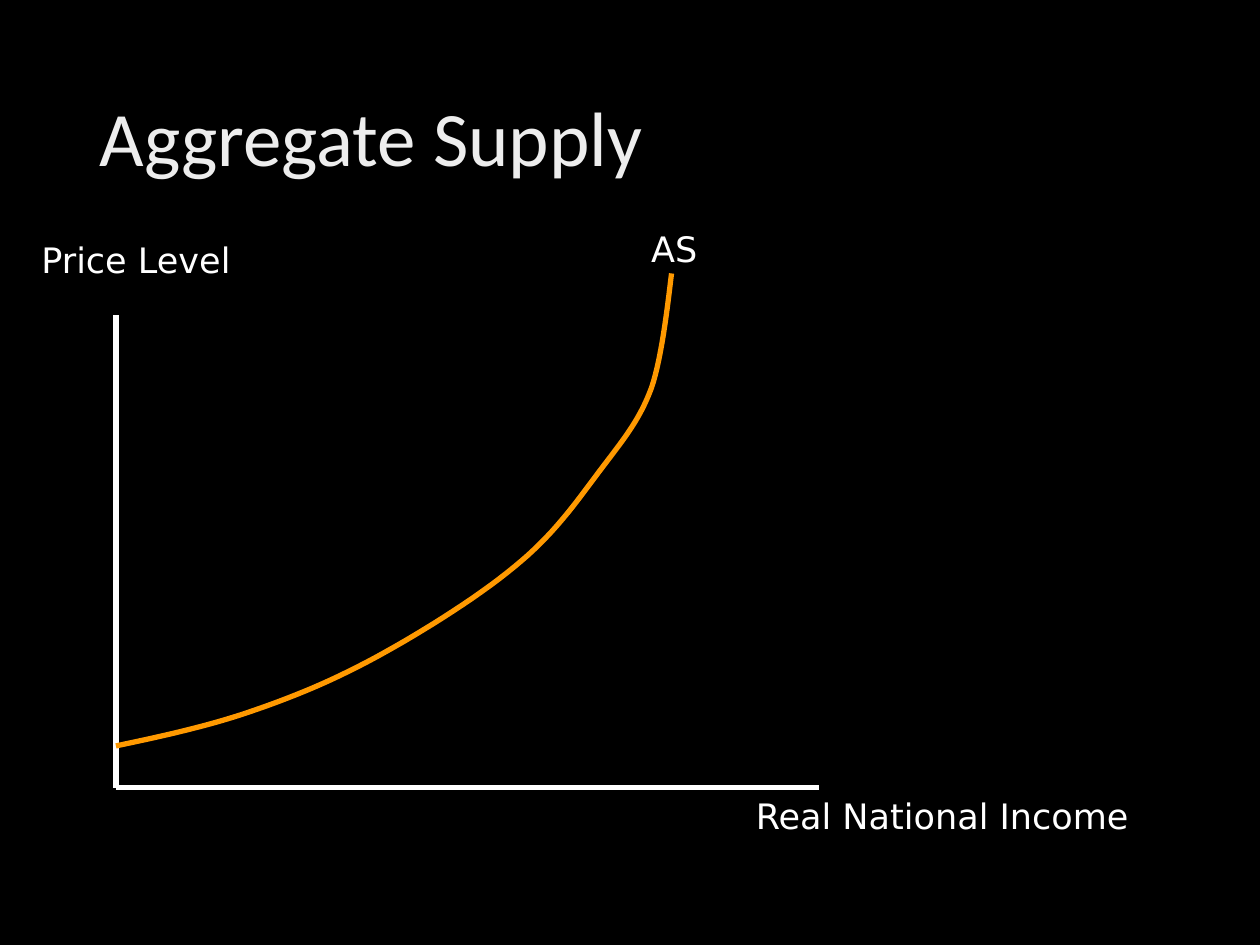
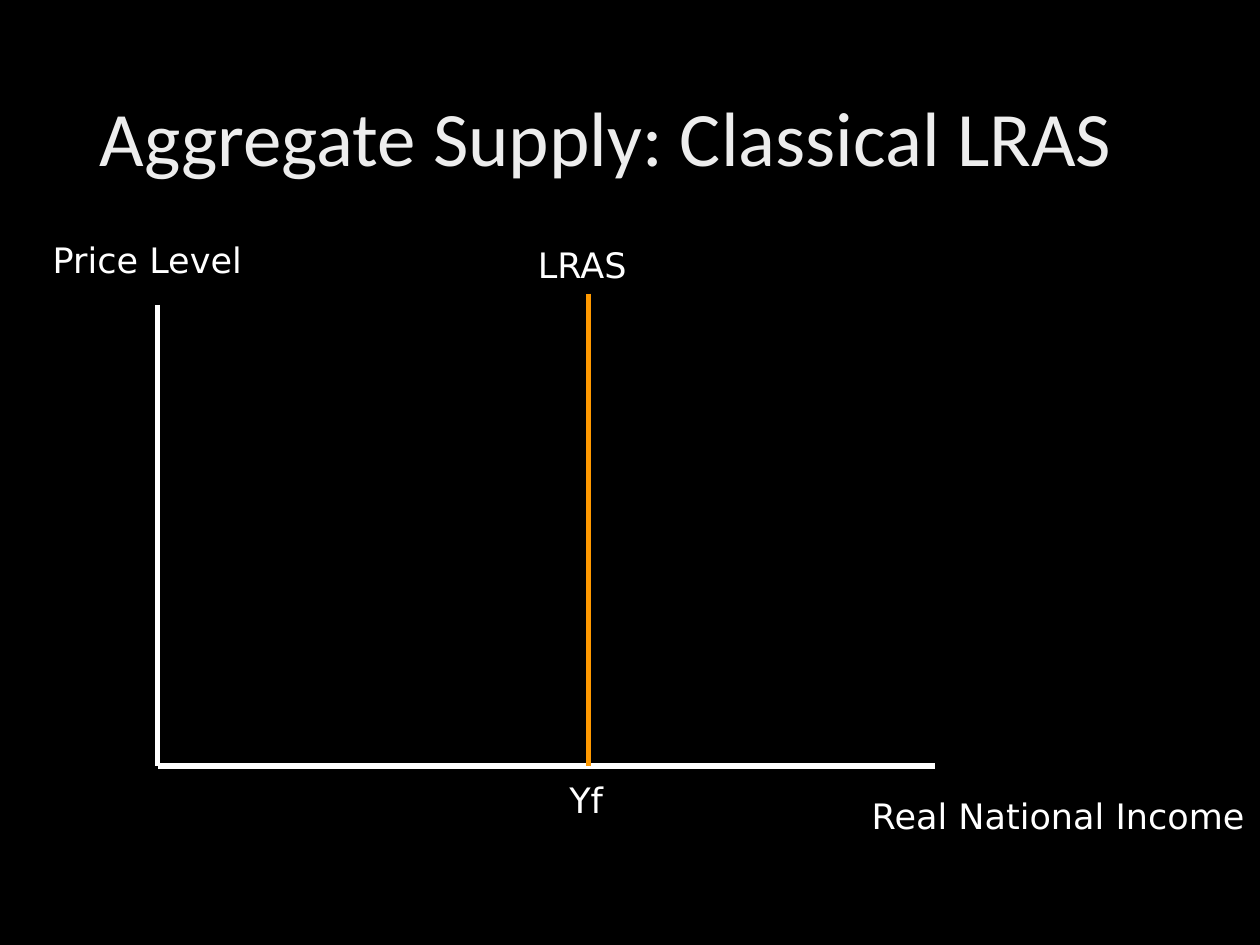
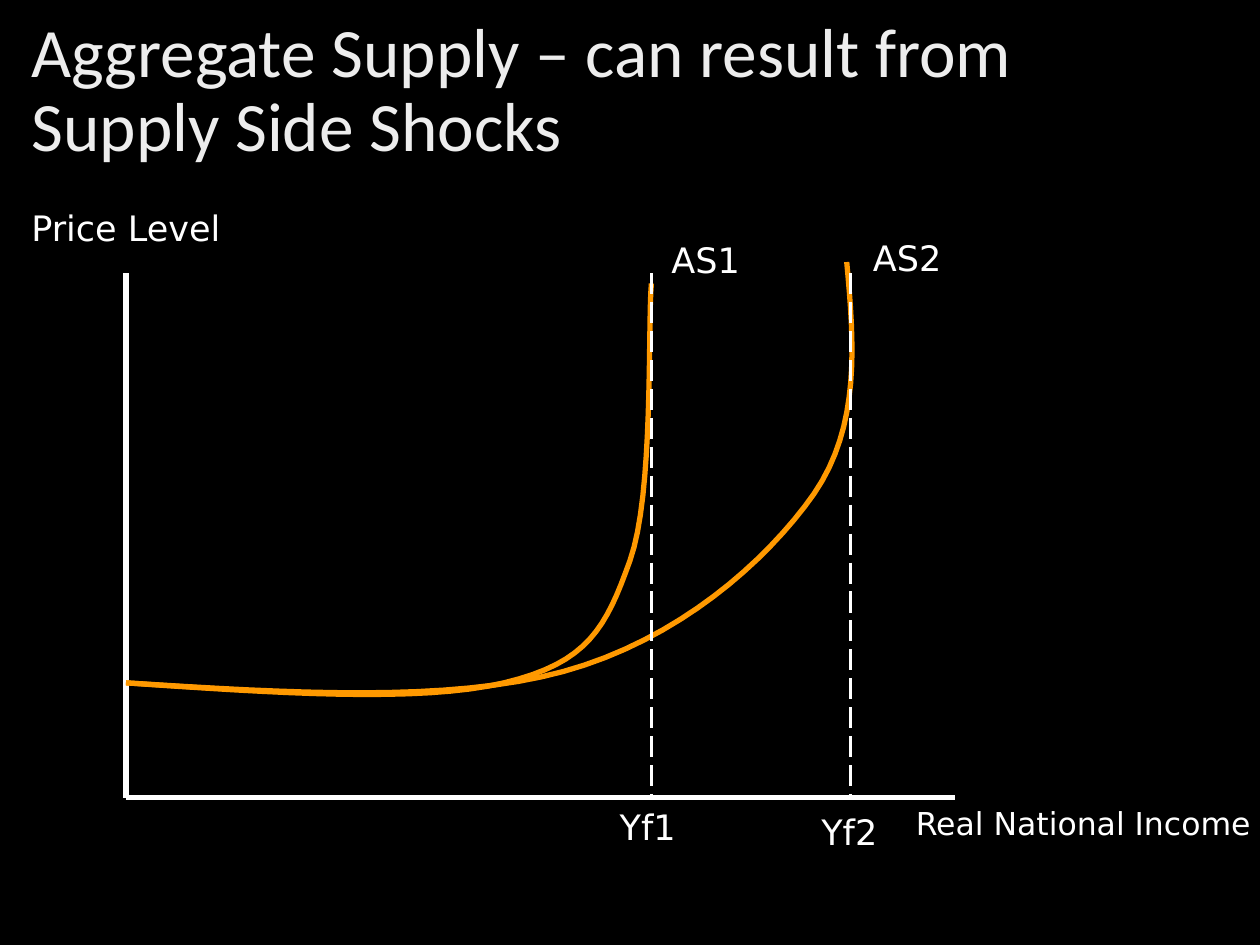
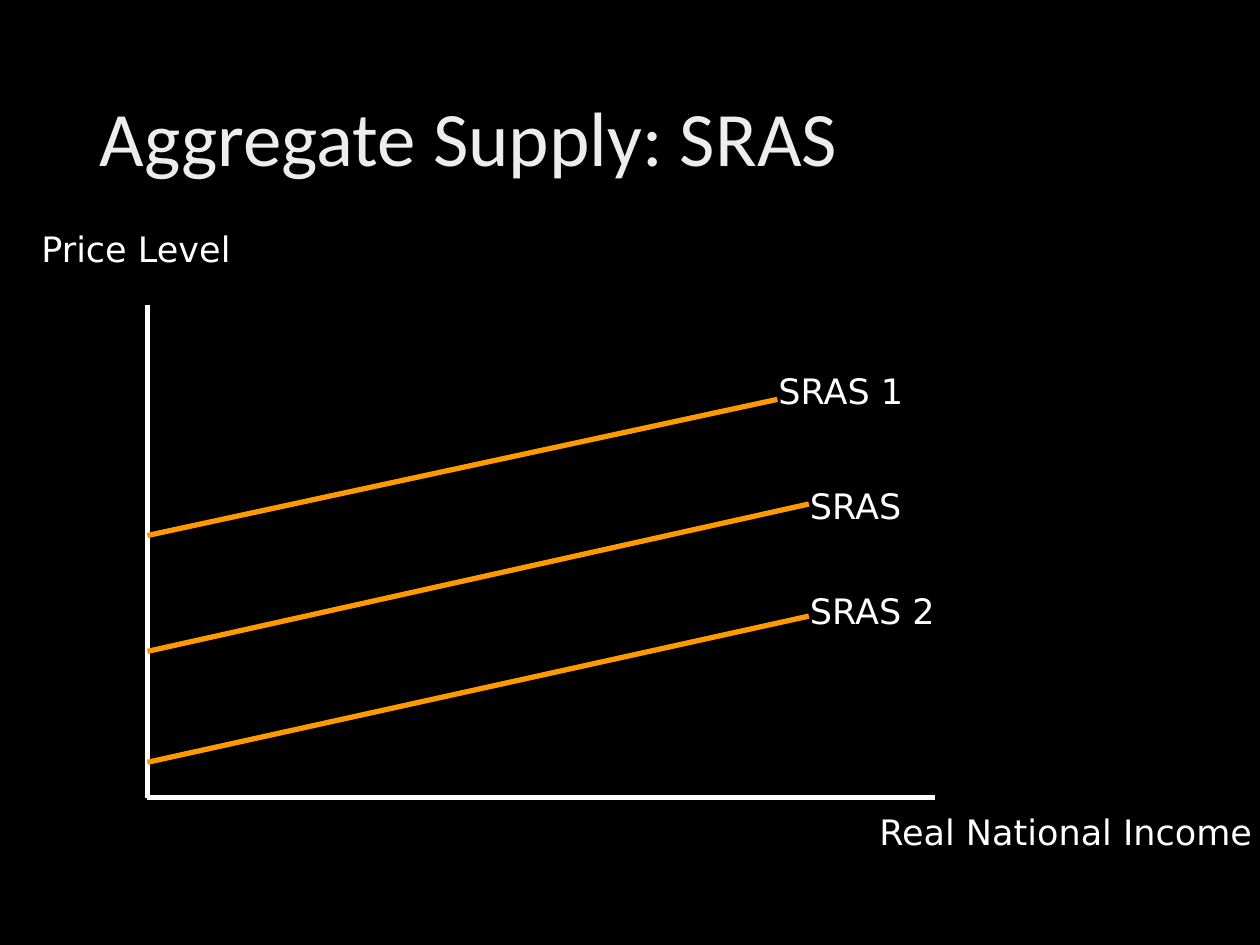
from copy import deepcopy
from dataclasses import dataclass

from lxml.etree import SubElement
from pptx import Presentation
from pptx.dml.color import RGBColor
from pptx.enum.dml import MSO_LINE
from pptx.enum.shapes import MSO_CONNECTOR
from pptx.enum.text import MSO_ANCHOR, MSO_AUTO_SIZE, PP_ALIGN
from pptx.oxml.ns import qn
from pptx.slide import Slide
from pptx.util import Inches, Pt

Point = tuple[float, float]

COLORS = {
    "background": "000000",
    "axis": "FFFFFF",
    "supply": "FF9900",
    "text": "FFFFFF",
    "title_start": "DEDEDE",
    "title_middle": "EDEDED",
    "title_end": "FFFFFF",
}
TITLE_STOPS = ((0, "title_start"), (0.28, "title_middle"), (1, "title_end"))
TITLE_FONT = "Calibri"
LABEL_FONT = "DejaVu Sans"
LABEL_SIZE = 20
LABEL_WIDTHS = {
    "Price Level": 1.71,
    "Real National Income": 3.18,
    "AS": 0.58,
    "LRAS": 0.93,
    "Yf": 0.47,
    "AS1": 0.76,
    "AS2": 0.76,
    "Yf1": 0.65,
    "Yf2": 0.65,
    "SRAS": 0.96,
    "SRAS 1": 1.24,
    "SRAS 2": 1.24,
}
CURVE_STEPS = 16
TITLE_ONLY_LAYOUT = 5


@dataclass(frozen=True)
class Title:
    text: str
    left: float = 0.69
    top: float = 0.4
    width: float = 8.62
    height: float = 1.45
    size: float = 44


@dataclass(frozen=True)
class Axes:
    left: float
    top: float
    right: float
    bottom: float


@dataclass(frozen=True)
class Line:
    start: Point
    end: Point
    color: str = "supply"
    width: float = 3
    dashed: bool = False


@dataclass(frozen=True)
class Label:
    text: str
    left: float
    top: float
    size: float = LABEL_SIZE


@dataclass(frozen=True)
class Diagram:
    title: Title
    axes: Axes
    labels: tuple[Label, ...]
    curves: tuple[tuple[Point, ...], ...] = ()
    lines: tuple[Line, ...] = ()


def full_output_line(x: float) -> Line:
    return Line((x, 2.17), (x, 6.33), "axis", 1.5, True)


DIAGRAMS = (
    Diagram(
        Title("Aggregate Supply"),
        Axes(0.92, 2.5, 6.5, 6.25),
        (
            Label("Price Level", 0.23, 1.84),
            Label("Real National Income", 5.9, 6.26),
            Label("AS", 5.07, 1.76),
        ),
        curves=((
            (0.92, 5.92),
            (1.25, 5.85), (1.58, 5.78), (1.92, 5.67),
            (2.25, 5.56), (2.56, 5.44), (2.92, 5.25),
            (3.28, 5.06), (3.78, 4.75), (4.08, 4.5),
            (4.39, 4.25), (4.57, 3.99), (4.75, 3.75),
            (4.93, 3.51), (5.07, 3.35), (5.17, 3.08),
            (5.26, 2.82), (5.31, 2.32), (5.33, 2.17),
        ),),
    ),
    Diagram(
        Title("Aggregate Supply: Classical LRAS", width=9.06),
        Axes(1.25, 2.42, 7.42, 6.08),
        (
            Label("Price Level", 0.32, 1.84),
            Label("Real National Income", 6.82, 6.26),
            Label("LRAS", 4.17, 1.88),
            Label("Yf", 4.42, 6.13),
        ),
        lines=(Line((4.67, 2.33), (4.67, 6.08)),),
    ),
    Diagram(
        Title("Aggregate Supply – can result from Supply Side Shocks",
              0.15, 0.27, 9.6, 0.92, 39.6),
        Axes(1, 2.17, 7.58, 6.33),
        (
            Label("Price Level", 0.15, 1.59),
            Label("Real National Income", 7.17, 6.33, 18),
            Label("AS1", 5.23, 1.84),
            Label("AS2", 6.83, 1.83),
            Label("Yf1", 4.82, 6.34),
            Label("Yf2", 6.42, 6.38),
        ),
        curves=(
            (
                (1, 5.42),
                (2.17, 5.5), (3.33, 5.58), (4, 5.42),
                (4.67, 5.26), (4.81, 4.98), (5, 4.45),
                (5.19, 3.92), (5.14, 2.62), (5.17, 2.25),
            ),
            (
                (1, 5.42),
                (2.28, 5.5), (3.56, 5.58), (4.47, 5.33),
                (5.38, 5.08), (6.08, 4.46), (6.46, 3.92),
                (6.83, 3.38), (6.78, 2.73), (6.72, 2.08),
            ),
        ),
        lines=(full_output_line(5.17), full_output_line(6.75)),
    ),
    Diagram(
        Title("Aggregate Supply: SRAS"),
        Axes(1.17, 2.42, 7.42, 6.33),
        (
            Label("Price Level", 0.23, 1.76),
            Label("Real National Income", 6.88, 6.38),
            Label("SRAS", 6.33, 3.8),
            Label("SRAS 1", 6.08, 2.88),
            Label("SRAS 2", 6.33, 4.63),
        ),
        lines=(
            Line((1.17, 5.17), (6.42, 4)),
            Line((1.17, 4.25), (6.17, 3.17)),
            Line((1.17, 6.05), (6.42, 4.89)),
        ),
    ),
)


def color(name: str) -> RGBColor:
    return RGBColor.from_string(COLORS[name])


def write_title(slide: Slide, title: Title) -> None:
    shape = slide.shapes.title
    shape.left, shape.top = Inches(title.left), Inches(title.top)
    shape.width, shape.height = Inches(title.width), Inches(title.height)
    frame = shape.text_frame
    frame.word_wrap = True
    frame.auto_size = MSO_AUTO_SIZE.NONE
    frame.vertical_anchor = MSO_ANCHOR.MIDDLE
    paragraph = frame.paragraphs[0]
    paragraph.alignment = PP_ALIGN.LEFT
    paragraph.line_spacing = 0.9
    run = paragraph.add_run()
    run.text = title.text
    run.font.name = TITLE_FONT
    run.font.size = Pt(title.size)
    fill = run.font.fill
    fill.gradient()
    fill.gradient_angle = 280
    stop_list = run._r.rPr.find(qn("a:gradFill")).find(qn("a:gsLst"))
    stop_list.insert(1, deepcopy(stop_list[0]))
    for stop, (position, name) in zip(fill.gradient_stops, TITLE_STOPS):
        stop.position = position
        stop.color.rgb = color(name)


def draw_line(slide: Slide, line: Line) -> None:
    connector = slide.shapes.add_connector(
        MSO_CONNECTOR.STRAIGHT,
        *(Inches(value) for value in (*line.start, *line.end)),
    )
    connector.line.color.rgb = color(line.color)
    connector.line.width = Pt(line.width)
    if line.dashed:
        connector.line.dash_style = MSO_LINE.LONG_DASH
    SubElement(connector._element.spPr, qn("a:effectLst"))


def draw_axes(slide: Slide, axes: Axes) -> None:
    origin = (axes.left, axes.bottom)
    draw_line(slide, Line((axes.left, axes.top), origin, "axis"))
    draw_line(slide, Line(origin, (axes.right, axes.bottom), "axis"))


def bezier_point(controls: tuple[Point, ...], t: float) -> Point:
    weights = ((1 - t) ** 3, 3 * t * (1 - t) ** 2, 3 * t ** 2 * (1 - t), t ** 3)
    x, y = (sum(w * v for w, v in zip(weights, values)) for values in zip(*controls))
    return x, y


def draw_curve(slide: Slide, nodes: tuple[Point, ...]) -> None:
    points = [
        bezier_point(nodes[first:first + 4], step / CURVE_STEPS)
        for first in range(0, len(nodes) - 1, 3)
        for step in range(1, CURVE_STEPS + 1)
    ]
    start_x, start_y = nodes[0]
    builder = slide.shapes.build_freeform(Inches(start_x), Inches(start_y))
    builder.add_line_segments([(Inches(x), Inches(y)) for x, y in points], close=False)
    curve = builder.convert_to_shape()
    curve.shadow.inherit = False
    curve.fill.background()
    curve.line.color.rgb = color("supply")
    curve.line.width = Pt(3)


def write_label(slide: Slide, label: Label) -> None:
    scale = label.size / LABEL_SIZE
    width = round(LABEL_WIDTHS[label.text] * scale, 2)
    shape = slide.shapes.add_textbox(
        Inches(label.left), Inches(label.top), Inches(width), Inches(0.43 * scale)
    )
    frame = shape.text_frame
    frame.word_wrap = False
    frame.auto_size = MSO_AUTO_SIZE.SHAPE_TO_FIT_TEXT
    run = frame.paragraphs[0].add_run()
    run.text = label.text
    run.font.name = LABEL_FONT
    run.font.size = Pt(label.size)
    run.font.color.rgb = color("text")


def draw_diagram(slide: Slide, diagram: Diagram) -> None:
    write_title(slide, diagram.title)
    draw_axes(slide, diagram.axes)
    for nodes in diagram.curves:
        draw_curve(slide, nodes)
    for line in diagram.lines:
        draw_line(slide, line)
    for label in diagram.labels:
        write_label(slide, label)


def main() -> None:
    presentation = Presentation()
    presentation.slide_width = Inches(10)
    presentation.slide_height = Inches(7.5)
    background = presentation.slide_master.background.fill
    background.solid()
    background.fore_color.rgb = color("background")
    layout = presentation.slide_layouts[TITLE_ONLY_LAYOUT]
    for diagram in DIAGRAMS:
        draw_diagram(presentation.slides.add_slide(layout), diagram)
    presentation.save("out.pptx")


if __name__ == "__main__":
    main()
